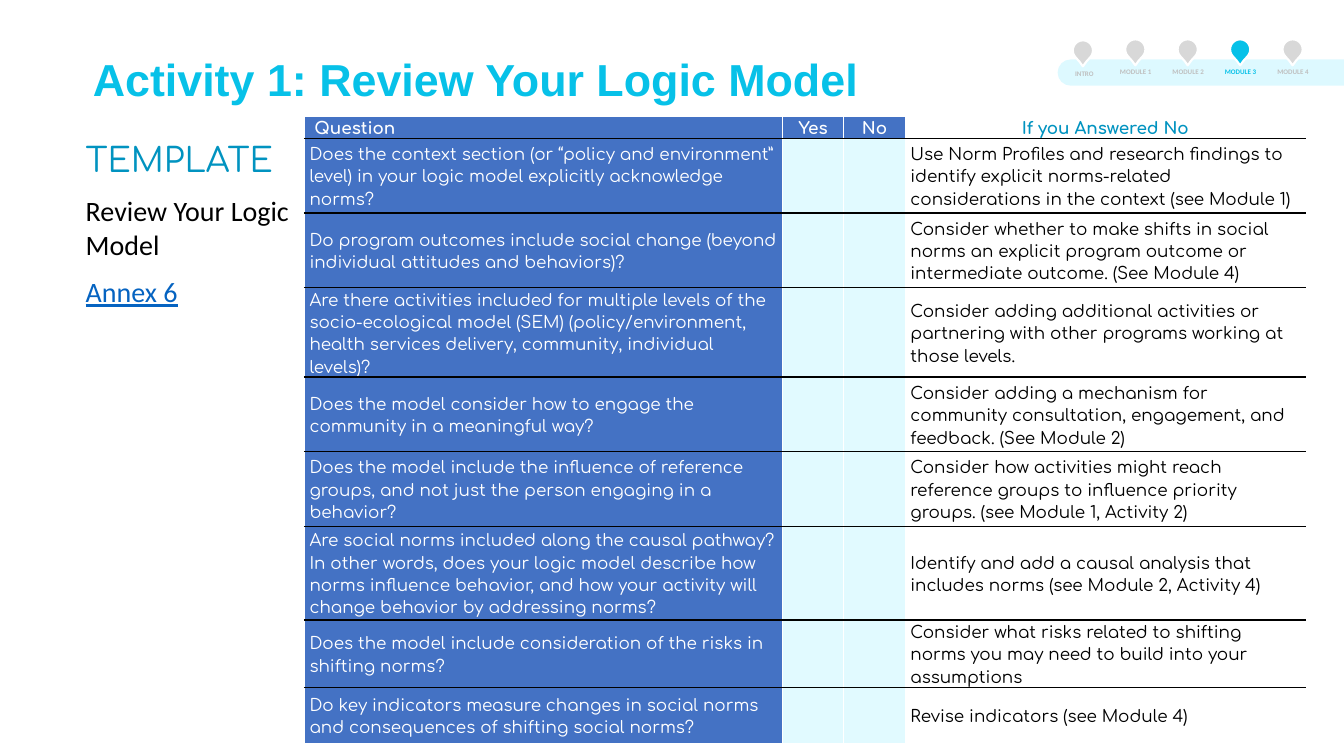
import pptx
import pptx.dml.color
import pptx.enum.shapes
import pptx.enum.text
import pptx.oxml
import pptx.oxml.ns
import pptx.util
from dataclasses import dataclass
from pptx.util import Inches

ALIGN = pptx.enum.text.PP_ALIGN
ANCHOR = pptx.enum.text.MSO_ANCHOR
CYAN, TEAL, BLUE, PALE = "07C1E8", "0193C0", "4472C4", "D1F8FF"
WHITE, BLACK = "FFFFFF", "000000"


@dataclass
class Stop:
    label: str
    pin: str = "D8D8D8"
    ink: str = "BFBFBF"
    drop: float = 0


@dataclass
class Check:
    question: str
    advice: str
    height: float = 0.74


STOPS = [
    Stop("INTRO", drop=0.01),
    Stop("MODULE 1"),
    Stop("MODULE 2"),
    Stop("MODULE 3", CYAN, CYAN),
    Stop("MODULE 4"),
]
CHECKS = [
    Check("Does the context section (or “policy and environment” level) in your logic model explicitly acknowledge norms?",
          "Use Norm Profiles and research findings to identify explicit norms-related considerations in the context (see Module 1)"),
    Check("Do program outcomes include social change (beyond individual attitudes and behaviors)?",
          "Consider whether to make shifts in social norms an explicit program outcome or intermediate outcome. (See Module 4)"),
    Check("Are there activities included for multiple levels of the socio-ecological model (SEM) (policy/environment, health services delivery, community, individual levels)?",
          "Consider adding additional activities or partnering with other programs working at those levels."),
    Check("Does the model consider how to engage the community in a meaningful way?",
          "Consider adding a mechanism for community consultation, engagement, and feedback. (See Module 2)"),
    Check("Does the model include the influence of reference groups, and not just the person engaging in a behavior?",
          "Consider how activities might reach reference groups to influence priority groups. (see Module 1, Activity 2)"),
    Check("Are social norms included along the causal pathway? In other words, does your logic model describe how norms influence behavior, and how your activity will change behavior by addressing norms?",
          "Identify and add a causal analysis that includes norms (see Module 2, Activity 4)", 0.93),
    Check("Does the model include consideration of the risks in shifting norms?",
          "Consider what risks related to shifting norms you may need to build into your assumptions", 0.56),
    Check("Do key indicators measure changes in social norms and consequences of shifting social norms?",
          "Revise indicators (see Module 4)", 0.56),
]


def rgb(value: str):
    return pptx.dml.color.RGBColor.from_string(value)


def write(paragraph, text: str, *, size: float, font: str, color: str, bold=False,
          underline=False, align=ALIGN.LEFT, spacing=1.0, before=0):
    run = paragraph.add_run()
    run.text = text
    run.font.size = pptx.util.Pt(size)
    run.font.name = font
    run.font.color.rgb = rgb(color)
    run.font.bold = bold
    run.font.underline = underline
    paragraph.alignment = align
    paragraph.line_spacing = spacing
    paragraph.space_before = pptx.util.Pt(before)


def place(shape, left: float, top: float, width: float, height: float):
    shape.left, shape.top = Inches(left), Inches(top)
    shape.width, shape.height = Inches(width), Inches(height)


def set_alpha(properties, percent: int):
    for color in properties.iter(pptx.oxml.ns.qn("a:srgbClr")):
        pptx.oxml.ns.qn("a:alpha")
        color.append(pptx.oxml.parse_xml(
            f'<a:alpha {pptx.oxml.ns.nsdecls("a")} val="{percent * 1000}"/>'))


def paint(cell, color: str, top: str, bottom: str, alpha=100):
    properties = cell._tc.get_or_add_tcPr()
    for side, line in (("L", WHITE), ("R", WHITE), ("T", top), ("B", bottom)):
        properties.append(pptx.oxml.parse_xml(
            f'<a:ln{side} {pptx.oxml.ns.nsdecls("a")} w="12700"><a:solidFill>'
            f'<a:srgbClr val="{line}"/></a:solidFill></a:ln{side}>'))
    cell.fill.solid()
    cell.fill.fore_color.rgb = rgb(color)
    if alpha < 100:
        set_alpha(properties.find(pptx.oxml.ns.qn("a:solidFill")), alpha)


def fill_cell(cell, text: str, color: str, bold=False, align=ALIGN.LEFT):
    cell.vertical_anchor = ANCHOR.MIDDLE
    cell.margin_left = cell.margin_right = Inches(0.05)
    cell.margin_top = cell.margin_bottom = 0
    write(cell.text_frame.paragraphs[0], text, size=12, font="Comfortaa",
          color=color, bold=bold, align=align, spacing=1.2)


def draw_checklist(slide):
    heights = [0.04] + [check.height for check in CHECKS]
    checklist = slide.shapes.add_table(len(heights), 4, Inches(3.02), Inches(1.15),
                                       Inches(9.93), Inches(sum(heights))).table
    checklist.first_row = checklist.horz_banding = False
    for column, width in zip(checklist.columns, (4.74, 0.61, 0.61, 3.97)):
        column.width = Inches(width)
    for row, height in zip(checklist.rows, heights):
        row.height = Inches(height)
    for index, heading in enumerate(("\u00a0Question".replace("\u00a0", " "), "Yes", "No", "If you Answered No")):
        cell = checklist.cell(0, index)
        paint(cell, WHITE if index == 3 else BLUE, WHITE, BLACK)
        fill_cell(cell, heading, TEAL if index == 3 else WHITE, True,
                  ALIGN.CENTER if index else ALIGN.LEFT)
    for number, check in enumerate(CHECKS, 1):
        bottom = WHITE if number == len(CHECKS) else BLACK
        question, yes, no, advice = checklist.rows[number].cells
        paint(question, BLUE, BLACK, bottom)
        paint(yes, PALE, BLACK, bottom, 63)
        paint(no, PALE, BLACK, bottom, 63)
        paint(advice, WHITE, BLACK, bottom)
        fill_cell(question, check.question, WHITE)
        fill_cell(advice, check.advice, BLACK)


def draw_track(slide):
    track = slide.shapes.add_connector(pptx.enum.shapes.MSO_CONNECTOR.STRAIGHT,
                                       Inches(10.62), Inches(0.72), Inches(13.33), Inches(0.72))
    track.line.width = pptx.util.Pt(18.75)
    track.line.color.rgb = rgb("BDF4FF")
    outline = track.line._get_or_add_ln()
    outline.set("cap", "rnd")
    set_alpha(outline, 50)
    track._element.spPr.append(pptx.oxml.parse_xml(
        f'<a:effectLst {pptx.oxml.ns.nsdecls("a")}/>'))


def draw_stop(slide, stop: Stop, offset: float):
    pin = slide.shapes.add_shape(pptx.enum.shapes.MSO_SHAPE.TEAR, Inches(10.64 + offset),
                                 Inches(0.39 + stop.drop), Inches(0.2), Inches(0.2))
    pin.adjustments[0] = 1.12
    pin.rotation = 135
    pin.shadow.inherit = False
    pin.fill.solid()
    pin.fill.fore_color.rgb = rgb(stop.pin)
    pin.line.color.rgb = rgb(WHITE)
    pin.line.width = pptx.util.Pt(1.5)
    label = slide.shapes.add_textbox(Inches(10.46 + offset + stop.drop), Inches(0.62 + 2 * stop.drop),
                                     Inches(0.57), Inches(0.19))
    label.text_frame.word_wrap = True
    write(label.text_frame.paragraphs[0], stop.label, size=5, font="Calibri",
          color=stop.ink, bold=True, align=ALIGN.CENTER)


def draw_title(title):
    place(title, 0.92, 0.57, 8.51, 0.37)
    frame = title.text_frame
    frame.margin_left = frame.margin_right = frame.margin_top = frame.margin_bottom = 0
    frame.vertical_anchor = ANCHOR.TOP
    frame.auto_size = pptx.enum.text.MSO_AUTO_SIZE.NONE
    write(frame.paragraphs[0], "Activity 1: Review Your Logic Model", size=32,
          font="Arial", color=CYAN, bold=True, spacing=0.9)


def draw_template_note(note):
    place(note, 0.75, 1.33, 2.27, 1.8)
    frame = note.text_frame
    frame.auto_size = pptx.enum.text.MSO_AUTO_SIZE.NONE
    write(frame.paragraphs[0], "TEMPLATE", size=24, font="Comfortaa", color=TEAL)
    write(frame.add_paragraph(), "Review Your Logic Model", size=20, font="Calibri",
          color=BLACK, before=10)
    write(frame.add_paragraph(), "Annex 6", size=20, font="Calibri", color="0563C1",
          underline=True, before=10)
    for paragraph in frame.paragraphs:
        properties = paragraph._p.get_or_add_pPr()
        properties.set("marL", "0")
        properties.set("indent", "0")
        properties.append(pptx.oxml.parse_xml(f'<a:buNone {pptx.oxml.ns.nsdecls("a")}/>'))


def main():
    deck = pptx.Presentation()
    deck.slide_width, deck.slide_height = Inches(13.33), Inches(7.5)
    slide = deck.slides.add_slide(deck.slide_layouts[1])
    draw_title(slide.shapes.title)
    draw_template_note(slide.placeholders[1])
    draw_checklist(slide)
    draw_track(slide)
    for index, stop in enumerate(STOPS):
        draw_stop(slide, stop, 0.52 * index)
    deck.save("out.pptx")


if __name__ == "__main__":
    main()
